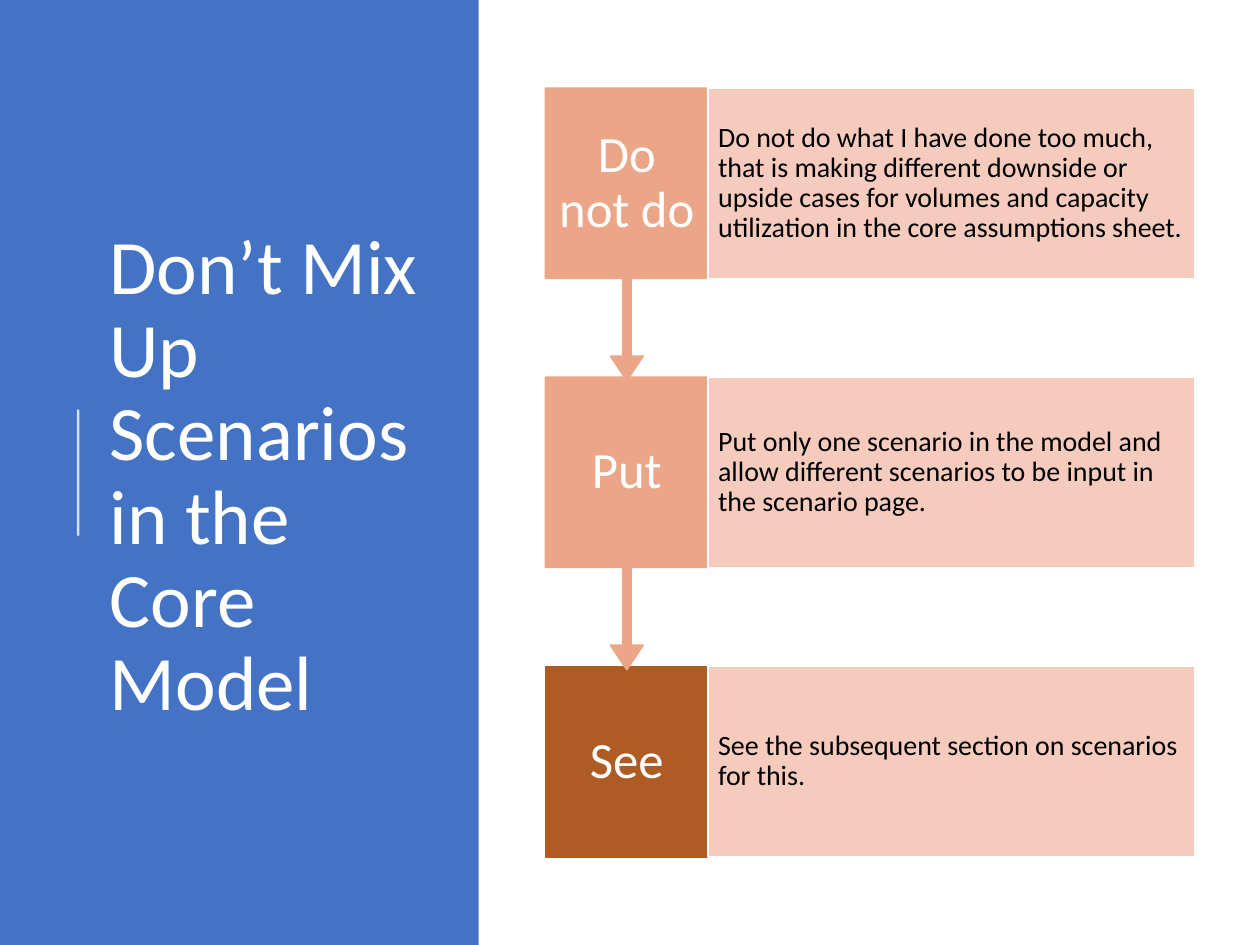
from pptx import Presentation
from pptx.dml.color import RGBColor
from pptx.enum.shapes import MSO_CONNECTOR, MSO_SHAPE
from pptx.enum.text import MSO_ANCHOR, MSO_AUTO_SIZE, PP_ALIGN
from pptx.oxml.ns import qn
from pptx.util import Inches, Pt
from lxml.etree import SubElement

THEME = {
    "font": "Calibri",
    "panel": RGBColor.from_string("4472C4"),
    "step": RGBColor.from_string("EBA587"),
    "last_step": RGBColor.from_string("AF5C24"),
    "detail": RGBColor.from_string("F5C6B6"),
    "light": RGBColor.from_string("FFFFFF"),
    "dark": RGBColor.from_string("000000"),
    "title_size": Pt(44),
    "step_size": Pt(29),
    "detail_size": Pt(16),
}


def write_text(shape, text, size, color, alignment, side, edge):
    frame = shape.text_frame
    frame.text = text
    frame_format = {
        "word_wrap": True,
        "auto_size": MSO_AUTO_SIZE.NONE,
        "vertical_anchor": MSO_ANCHOR.MIDDLE,
        "margin_left": Inches(side),
        "margin_right": Inches(side),
        "margin_top": Inches(edge),
        "margin_bottom": Inches(edge),
    }
    for name, value in frame_format.items():
        setattr(frame, name, value)
    paragraph = frame.paragraphs[0]
    paragraph.alignment = alignment
    paragraph.line_spacing = 0.9
    font_format = {"name": THEME["font"], "size": size}
    for name, value in font_format.items():
        setattr(paragraph.font, name, value)
    paragraph.font.color.rgb = color


def add_block(kind, left, top, width, height, fill, line):
    shape = slide.shapes.add_shape(
        kind, Inches(left), Inches(top), Inches(width), Inches(height)
    )
    shape.shadow.inherit = False
    shape.fill.solid()
    shape.fill.fore_color.rgb = fill
    shape.line.color.rgb = line
    shape.line.width = Pt(1)
    return shape


presentation = Presentation()
presentation.slide_width = Inches(10)
presentation.slide_height = Inches(7.5)
slide = presentation.slides.add_slide(presentation.slide_layouts[5])

panel = add_block(MSO_SHAPE.RECTANGLE, 0, 0, 3.8, 7.5, THEME["panel"], THEME["panel"])
panel.line.fill.background()

accent = slide.shapes.add_connector(
    MSO_CONNECTOR.STRAIGHT, Inches(0.62), Inches(4.25), Inches(0.62), Inches(3.25)
)
accent.line.color.rgb = THEME["light"]
accent.line.width = Pt(1.5)
accent_properties = accent.element.spPr
SubElement(accent_properties, qn("a:effectLst"))
accent_color = next(accent_properties.iter(qn("a:srgbClr")))
SubElement(accent_color, qn("a:alpha"), val="80000")

steps = [
    ("Do not do", "Do not do what I have done too much, that is making different downside or upside cases for volumes and capacity utilization in the core assumptions sheet."),
    ("Put", "Put only one scenario in the model and allow different scenarios to be input in the scenario page."),
    ("See", "See the subsequent section on scenarios for this."),
]
first_top, pitch = 0.7, 2.295
step_left, step_width, step_height = 4.33, 1.29, 1.51
detail_left, detail_width = step_left + step_width, 3.86

for index, (label, detail) in reversed(list(enumerate(steps))):
    top = first_top + index * pitch
    if index == len(steps) - 1:
        kind, height, color = MSO_SHAPE.RECTANGLE, step_height, THEME["last_step"]
    else:
        kind, height, color = MSO_SHAPE.DOWN_ARROW_CALLOUT, 2.32, THEME["step"]
    step_box = add_block(kind, step_left, top, step_width, height, color, color)
    if kind == MSO_SHAPE.DOWN_ARROW_CALLOUT:
        for position, value in enumerate([0.05, 0.1, 0.15, 0.65]):
            step_box.adjustments[position] = value
    write_text(step_box, label, THEME["step_size"], THEME["light"], PP_ALIGN.CENTER, 0.09, 0.23)

    detail_box = add_block(
        MSO_SHAPE.RECTANGLE, detail_left, top, detail_width, step_height,
        THEME["detail"], THEME["light"],
    )
    detail_color = next(detail_box.element.spPr.iter(qn("a:srgbClr")))
    SubElement(detail_color, qn("a:alpha"), val="90000")
    write_text(detail_box, detail, THEME["detail_size"], THEME["dark"], PP_ALIGN.LEFT, 0.08, 0.22)

title = slide.shapes.title
title_position = {"left": 0.77, "top": 0.78, "width": 2.76, "height": 6.02}
for name, value in title_position.items():
    setattr(title, name, Inches(value))
write_text(
    title, "Don’t Mix Up Scenarios in the Core Model",
    THEME["title_size"], THEME["light"], PP_ALIGN.LEFT, 0.1, 0.05,
)
title.element.getparent().append(title.element)

presentation.save("out.pptx")
